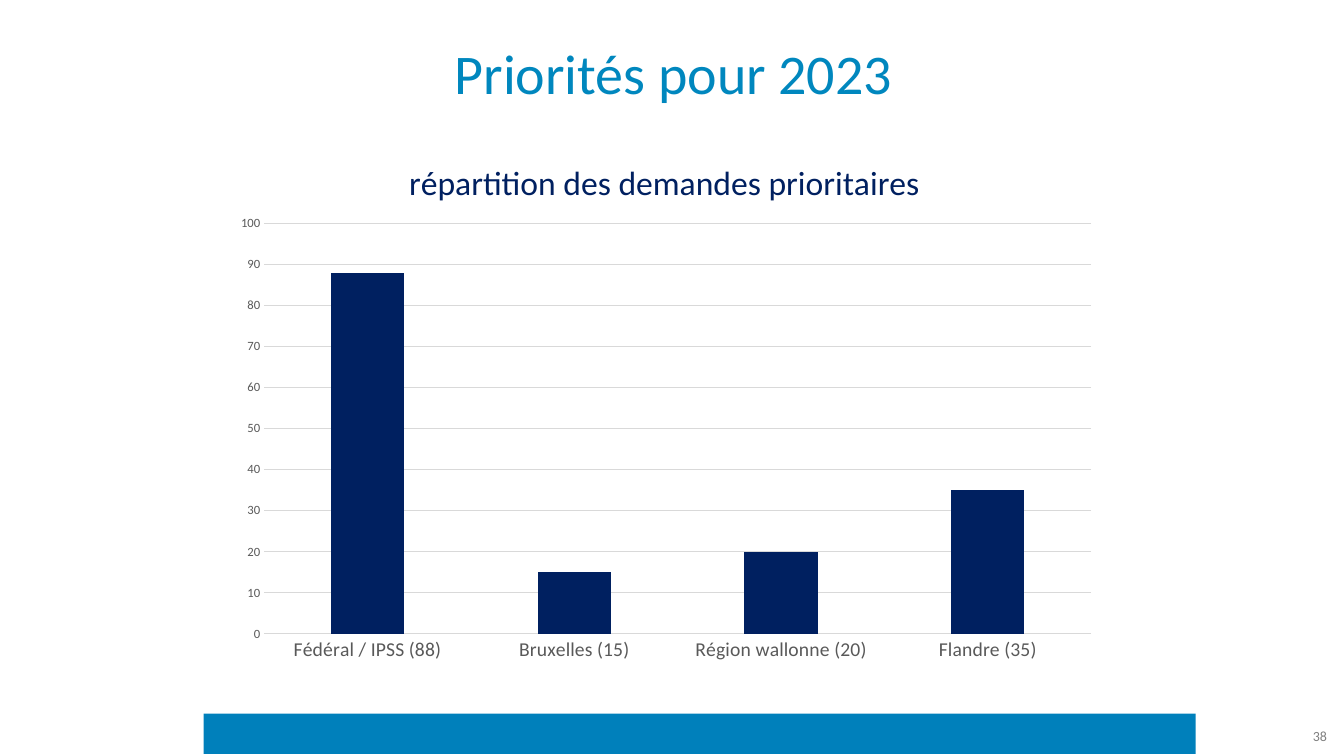
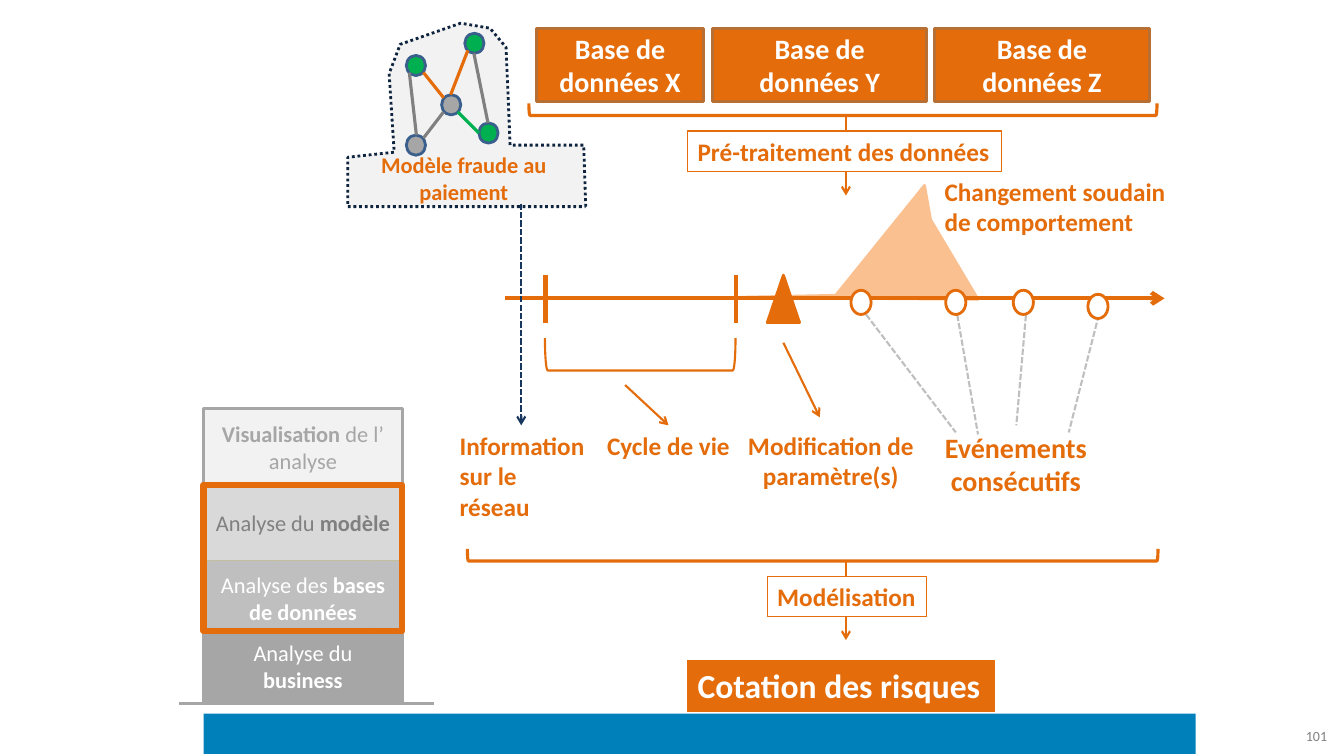
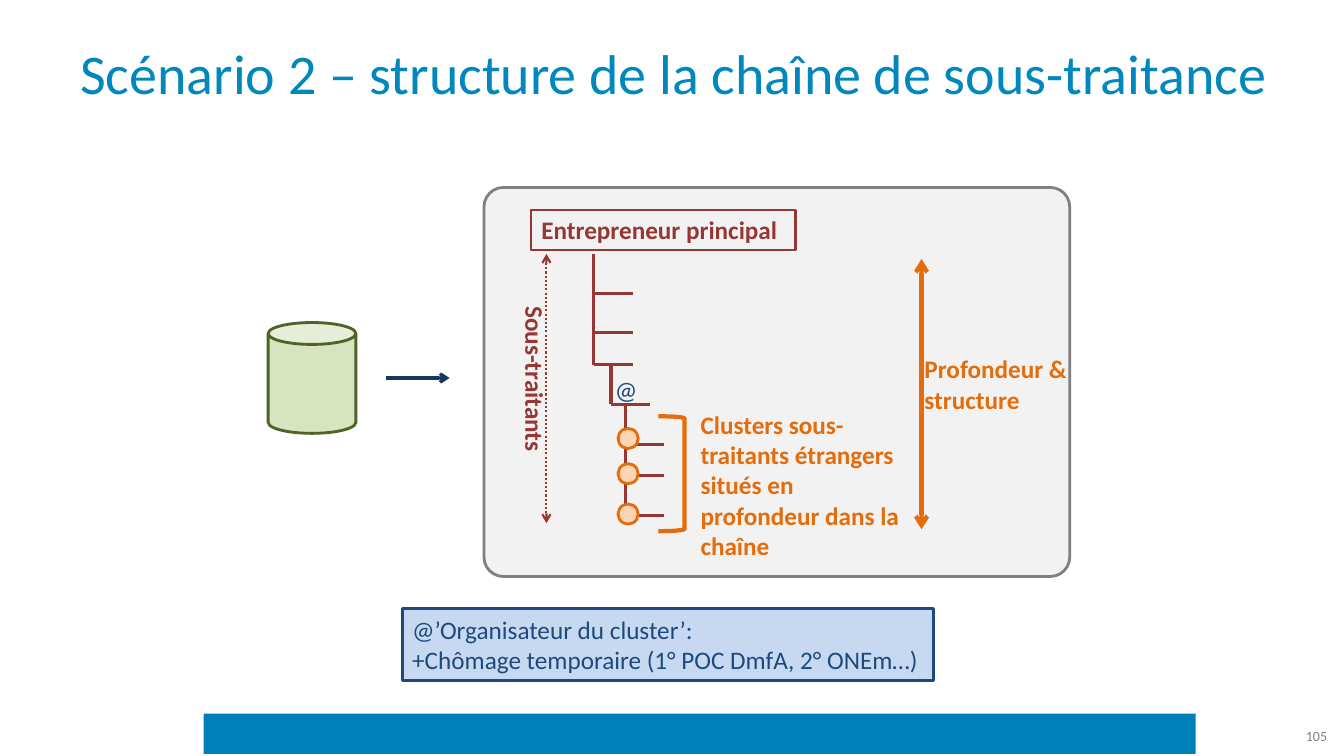
from dataclasses import dataclass
from typing import NamedTuple, Optional

from lxml.etree import SubElement
from pptx import Presentation
from pptx.chart.data import CategoryChartData
from pptx.dml.color import RGBColor
from pptx.enum.chart import XL_CHART_TYPE, XL_TICK_MARK
from pptx.enum.dml import MSO_LINE
from pptx.enum.shapes import MSO_CONNECTOR, MSO_SHAPE
from pptx.enum.text import MSO_ANCHOR, MSO_AUTO_SIZE, PP_ALIGN
from pptx.oxml import parse_xml
from pptx.oxml.ns import nsdecls, qn
from pptx.util import Inches, Pt

FONT = "Calibri"
WHITE = RGBColor(0xFF, 0xFF, 0xFF)
BAND_BLUE = RGBColor(0x00, 0x80, 0xBB)
TITLE_BLUE = RGBColor(0x00, 0x87, 0xBE)
BAR_NAVY = RGBColor(0x00, 0x20, 0x60)
OUTLINE_NAVY = RGBColor(0x0F, 0x24, 0x3E)
ARROW_NAVY = RGBColor(0x17, 0x37, 0x5E)
NOTE_BLUE = RGBColor(0x1F, 0x49, 0x7D)
NOTE_FILL = RGBColor(0xC6, 0xD9, 0xF1)
NODE_BLUE = RGBColor(0x3A, 0x5F, 0x8C)
ORANGE = RGBColor(0xE4, 0x6C, 0x0A)
BROWN = RGBColor(0xB7, 0x6F, 0x34)
PEACH = RGBColor(0xFA, 0xC0, 0x90)
PALE_PEACH = RGBColor(0xFC, 0xD5, 0xB5)
GREEN = RGBColor(0x00, 0xB0, 0x50)
CAN_FILL = RGBColor(0xD7, 0xE4, 0xBD)
CAN_LINE = RGBColor(0x4F, 0x62, 0x28)
RED = RGBColor(0x95, 0x37, 0x35)
TAN = RGBColor(0xC4, 0xBD, 0x97)
GRAY_95 = RGBColor(0xF2, 0xF2, 0xF2)
GRAY_85 = RGBColor(0xD9, 0xD9, 0xD9)
GRAY_75 = RGBColor(0xBF, 0xBF, 0xBF)
GRAY_65 = RGBColor(0xA6, 0xA6, 0xA6)
GRAY_50 = RGBColor(0x80, 0x80, 0x80)
GRAY_35 = RGBColor(0x59, 0x59, 0x59)

DASH, DOT = MSO_LINE.SQUARE_DOT, MSO_LINE.ROUND_DOT
CENTER, RIGHT = PP_ALIGN.CENTER, PP_ALIGN.RIGHT
RECT, OVAL, BRACKET = MSO_SHAPE.RECTANGLE, MSO_SHAPE.OVAL, MSO_SHAPE.RIGHT_BRACKET


class Rect(NamedTuple):
    left: float
    top: float
    width: float
    height: float


class Point(NamedTuple):
    x: float
    y: float


@dataclass(frozen=True)
class Stroke:
    color: RGBColor
    width: float
    dash: Optional[MSO_LINE] = None
    head: bool = False
    tail: bool = False


class Layer(NamedTuple):
    text: str
    top: float
    fill: RGBColor
    color: RGBColor
    edge: RGBColor = TAN


class Branch(NamedTuple):
    x: float
    top: float
    bottom: float


def set_line(line, stroke: Optional[Stroke]) -> None:
    if stroke is None:
        line.fill.background()
        return
    line.color.rgb = stroke.color
    line.width = Pt(stroke.width)
    if stroke.dash:
        line.dash_style = stroke.dash


def paint(sp, fill: Optional[RGBColor], stroke: Optional[Stroke]) -> None:
    sp.shadow.inherit = False
    if fill is None:
        sp.fill.background()
    else:
        sp.fill.solid()
        sp.fill.fore_color.rgb = fill
    set_line(sp.line, stroke)


def write(sp, text: str, *, size: float = 18, color: RGBColor = ORANGE,
          bold: bool = False, align: PP_ALIGN = PP_ALIGN.LEFT,
          middle: bool = False, wrap: bool = True, grow: bool = False) -> None:
    """Fill a shape with text; parts between ** marks are bold."""
    tf = sp.text_frame
    tf.word_wrap = wrap
    tf.auto_size = MSO_AUTO_SIZE.SHAPE_TO_FIT_TEXT if grow else MSO_AUTO_SIZE.NONE
    tf.vertical_anchor = MSO_ANCHOR.MIDDLE if middle else MSO_ANCHOR.TOP
    for i, row in enumerate(text.split("\n")):
        p = tf.add_paragraph() if i else tf.paragraphs[0]
        p.alignment = align
        for j, part in enumerate(row.split("**")):
            if not part:
                continue
            r = p.add_run()
            r.text = part
            r.font.name = FONT
            r.font.size = Pt(size)
            r.font.bold = bold or j % 2 == 1
            r.font.color.rgb = color


def add_shape(s, kind: MSO_SHAPE, at: Rect, fill: Optional[RGBColor] = None,
              stroke: Optional[Stroke] = None, rotation: float = 0):
    sp = s.shapes.add_shape(kind, *map(Inches, at))
    sp.rotation = rotation
    paint(sp, fill, stroke)
    return sp


def add_text(s, text: str, at: Rect, rotation: float = 0, **fmt) -> None:
    sp = s.shapes.add_textbox(*map(Inches, at))
    sp.rotation = rotation
    write(sp, text, **fmt)


def add_label(s, text: str, at: Rect, **fmt) -> None:
    add_text(s, text, at, bold=True, grow=True, **fmt)


def add_tag(s, text: str, at: Rect, stroke: Stroke,
            fill: Optional[RGBColor] = None, **fmt) -> None:
    """Framed one-line label that sizes itself to its text."""
    write(add_shape(s, RECT, at, fill, stroke), text, wrap=False, grow=True, **fmt)


def add_line(s, start: Point, end: Point, stroke: Stroke) -> None:
    c = s.shapes.add_connector(MSO_CONNECTOR.STRAIGHT, *map(Inches, (*start, *end)))
    set_line(c.line, stroke)
    sp_pr = c.element.spPr
    ln = sp_pr.find(qn("a:ln"))
    for end_tag, wanted in (("a:headEnd", stroke.head), ("a:tailEnd", stroke.tail)):
        if wanted:
            SubElement(ln, qn(end_tag)).set("type", "arrow")
    SubElement(sp_pr, qn("a:effectLst"))


def add_outline(s, points: list[Point], fill: RGBColor, stroke: Stroke) -> None:
    corners = [(Inches(x), Inches(y)) for x, y in points]
    builder = s.shapes.build_freeform(*corners[0])
    builder.add_line_segments(corners[1:], close=True)
    paint(builder.convert_to_shape(), fill, stroke)


def new_slide(prs, number: int, title: str = ""):
    """Blank slide with the blue band, its page number and an optional title."""
    s = prs.slides.add_slide(prs.slide_layouts[6])
    add_shape(s, RECT, Rect(2.02, 7.08, 9.84, 0.4), BAND_BLUE)
    add_text(s, str(number), Rect(12.17, 7.1, 1.09, 0.4), size=10,
             color=GRAY_50, align=RIGHT, middle=True)
    if title:
        add_text(s, title, Rect(0.68, 0.21, 12, 1.01), size=40,
                 color=TITLE_BLUE, align=CENTER, middle=True)
    return s


def set_font(font, size: float, color: RGBColor) -> None:
    font.name, font.size, font.bold = FONT, Pt(size), False
    font.color.rgb = color


def priorities_slide(prs) -> None:
    s = new_slide(prs, 38, "Priorités pour 2023")
    requests = {"Fédéral / IPSS": 88, "Bruxelles": 15, "Région wallonne": 20, "Flandre": 35}
    data = CategoryChartData()
    data.categories = [f"{name} ({count})" for name, count in requests.items()]
    data.add_series("Series 1", list(requests.values()))
    chart = s.shapes.add_chart(XL_CHART_TYPE.COLUMN_CLUSTERED,
                               *map(Inches, Rect(2.18, 1.37, 8.82, 5.29)), data).chart
    set_font(chart.font, 10, RGBColor(0, 0, 0))
    chart.has_legend = False
    chart.has_title = True
    tf = chart.chart_title.text_frame
    tf.text = "répartition des demandes prioritaires"
    set_font(tf.paragraphs[0].runs[0].font, 24, BAR_NAVY)
    chart.chart_title.include_in_layout = False

    plot = chart.plots[0]
    plot.gap_width = 182
    plot.vary_by_categories = False
    fill = plot.series[0].format.fill
    fill.solid()
    fill.fore_color.rgb = BAR_NAVY

    grid = Stroke(GRAY_85, 0.75)
    cat, val = chart.category_axis, chart.value_axis
    for axis, size, stroke in ((cat, 14, grid), (val, 9, None)):
        axis.major_tick_mark = axis.minor_tick_mark = XL_TICK_MARK.NONE
        set_font(axis.tick_labels.font, size, GRAY_35)
        set_line(axis.format.line, stroke)
    val.minimum_scale, val.maximum_scale, val.major_unit = 0, 100, 10
    set_line(val.major_gridlines.format.line, grid)

    area = chart.element.find(".//" + qn("c:plotArea"))
    for layout in area.findall(qn("c:layout")):
        area.remove(layout)
    area.insert(0, parse_xml(
        f'<c:layout {nsdecls("c")}><c:manualLayout><c:layoutTarget val="inner"/>'
        '<c:xMode val="edge"/><c:yMode val="edge"/><c:x val="0.05"/><c:y val="0.16"/>'
        '<c:w val="0.93"/><c:h val="0.77"/></c:manualLayout></c:layout>'))


def add_network(s) -> None:
    """Fraud model: a small graph in a dotted outline."""
    for fill, nodes in ((GREEN, ((4.03, 0.55), (4.61, 0.33), (4.75, 1.22))),
                        (GRAY_65, ((4.03, 1.34), (4.38, 0.94)))):
        for x, y in nodes:
            add_shape(s, OVAL, Rect(x, y, 0.19, 0.2), fill, Stroke(NODE_BLUE, 2))
    edges = (
        (Point(4.7, 0.53), Point(4.84, 1.22), GRAY_50),
        (Point(4.64, 0.5), Point(4.47, 0.94), ORANGE),
        (Point(4.54, 1.11), Point(4.75, 1.32), GREEN),
        (Point(4.4, 1.11), Point(4.2, 1.37), GRAY_50),
        (Point(4.4, 0.97), Point(4.2, 0.72), ORANGE),
        (Point(4.06, 0.72), Point(4.13, 1.34), GRAY_50),
    )
    for start, end, color in edges:
        add_line(s, start, end, Stroke(color, 2.25))
    add_label(s, "Modèle fraude au paiement", Rect(3.38, 1.45, 2.44, 0.64),
              size=16, align=CENTER)


def add_layers(s) -> None:
    """Stack of analysis layers at the lower left."""
    left, width = 2.02, 1.97
    add_line(s, Point(1.78, 6.98), Point(4.3, 6.98), Stroke(GRAY_65, 2.25))
    layers = (
        Layer("**Visualisation **de l’ analyse", 4.06, GRAY_95, GRAY_65),
        Layer("Analyse du **modèle**", 4.81, GRAY_85, GRAY_50),
        Layer("Analyse des **bases de données**", 5.56, GRAY_75, WHITE),
        Layer("Analyse du **business**", 6.23, GRAY_65, WHITE, GRAY_75),
    )
    for layer in layers:
        sp = add_shape(s, RECT, Rect(left, layer.top, width, 0.75), layer.fill,
                       Stroke(layer.edge, 0.75, DASH))
        write(sp, layer.text, size=16, color=layer.color, align=CENTER, middle=True)
    add_shape(s, RECT, Rect(left, 4.05, width, 2.93), None, Stroke(GRAY_65, 2))
    add_shape(s, RECT, Rect(left, 4.81, width, 1.45), None, Stroke(ORANGE, 4.5))


def risk_slide(prs) -> None:
    s = new_slide(prs, 101)
    arrow, thick = Stroke(ORANGE, 1.5, tail=True), Stroke(ORANGE, 3)
    edge, frame = Stroke(ORANGE, 2), Stroke(ORANGE, 0.75)
    for start, end in ((Point(8.59, 3.12), Point(9.48, 4.29)),
                       (Point(9.48, 3.04), Point(9.7, 4.31)),
                       (Point(10.19, 2.96), Point(10.08, 4.22)),
                       (Point(10.92, 3.04), Point(10.6, 4.29))):
        add_line(s, start, end, Stroke(GRAY_75, 1.5, DASH))

    cloud = [Point(5.81, 2.05), Point(5.79, 1.44), Point(5.06, 1.44), Point(5.02, 0.47),
             Point(4.86, 0.28), Point(4.57, 0.23), Point(3.97, 0.44), Point(3.86, 0.73),
             Point(3.91, 1.51), Point(3.45, 1.56), Point(3.45, 2.05)]
    add_outline(s, cloud, GRAY_95, Stroke(OUTLINE_NAVY, 2, DOT))
    peak = [Point(7.33, 2.95), Point(8.29, 2.93), Point(9.17, 1.84),
            Point(9.23, 2.18), Point(9.7, 2.97)]
    add_outline(s, peak, PEACH, Stroke(PEACH, 2))

    for name, left, width in (("X", 5.32, 1.66), ("Y", 7.07, 2.12), ("Z", 9.27, 2.13)):
        sp = add_shape(s, RECT, Rect(left, 0.28, width, 0.73), ORANGE, Stroke(BROWN, 2))
        write(sp, f"Base de données {name}", size=20, color=WHITE, bold=True,
              align=CENTER, middle=True)

    add_line(s, Point(5.01, 2.96), Point(11.55, 2.96), Stroke(ORANGE, 3, tail=True))
    for x in (5.41, 7.3):
        add_line(s, Point(x, 2.73), Point(x, 3.2), thick)
    for x, y in ((8.44, 2.88), (9.38, 2.88), (10.05, 2.88), (10.79, 2.92)):
        add_shape(s, OVAL, Rect(x, y, 0.2, 0.24), WHITE, edge)
    add_shape(s, MSO_SHAPE.ISOSCELES_TRIANGLE, Rect(7.61, 2.73, 0.32, 0.47), ORANGE, edge)

    for at, width in ((Rect(6.19, 2.57, 0.32, 1.89), 1.5),
                      (Rect(8.3, -2.03, 0.12, 6.23), 2.25),
                      (Rect(8, 2.08, 0.12, 6.85), 2.25)):
        add_shape(s, BRACKET, at, None, Stroke(ORANGE, width), rotation=90)
    for start, end in ((Point(7.77, 3.4), Point(8.13, 4.14)),
                       (Point(6.2, 3.82), Point(6.63, 4.22)),
                       (Point(8.39, 1.15), Point(8.39, 1.94)),
                       (Point(8.39, 5.56), Point(8.39, 6.35))):
        add_line(s, start, end, arrow)

    add_label(s, "Evénements consécutifs", Rect(8.87, 4.22, 2.41, 0.77),
              size=20, align=CENTER)
    add_label(s, "Cycle de vie", Rect(5.8, 4.22, 1.66, 0.4), align=CENTER)
    add_label(s, "Modification de paramètre(s)", Rect(7.29, 4.22, 1.9, 0.71), align=CENTER)
    add_label(s, "Changement soudain de comportement", Rect(9.27, 1.7, 2.43, 0.71))
    add_tag(s, "Pré-traitement des données", Rect(6.82, 1.3, 3.11, 0.4), frame, WHITE, bold=True)
    add_tag(s, "Modélisation", Rect(7.61, 5.72, 1.58, 0.4), frame, WHITE, bold=True)
    add_tag(s, "Cotation des risques", Rect(6.82, 6.55, 3.04, 0.51), frame, ORANGE,
            size=24, color=WHITE, bold=True)

    add_network(s)
    add_line(s, Point(5.17, 2.02), Point(5.17, 4.22),
             Stroke(ARROW_NAVY, 1.5, DASH, tail=True))
    add_label(s, "Information sur le réseau", Rect(4.46, 4.22, 1.51, 1.01))
    add_layers(s)


def chain_slide(prs) -> None:
    s = new_slide(prs, 105, "Scénario 2 – structure de la chaîne de sous-traitance")
    panel = add_shape(s, MSO_SHAPE.ROUNDED_RECTANGLE, Rect(4.8, 1.86, 5.81, 3.86),
                      GRAY_95, Stroke(GRAY_50, 2))
    panel.adjustments[0] = 0.05

    branches = (Branch(5.89, 2.52, 2.91), Branch(5.89, 2.91, 3.3), Branch(5.89, 3.22, 3.62),
                Branch(6.06, 3.62, 4.01), Branch(6.2, 4.01, 4.41), Branch(6.2, 4.33, 4.72),
                Branch(6.2, 4.72, 5.11))
    for x, top, bottom in branches:
        corner = Point(x, bottom)
        for end in (Point(x, top), Point(x + 0.39, bottom)):
            add_line(s, corner, end, Stroke(RED, 2.25))

    add_shape(s, BRACKET, Rect(6.53, 4.13, 0.26, 1.14), None, Stroke(ORANGE, 3))
    for y in (4.25, 4.6, 5):
        add_shape(s, OVAL, Rect(6.13, y, 0.2, 0.2), PALE_PEACH, Stroke(ORANGE, 2))
    add_label(s, "Clusters sous-traitants étrangers situés en profondeur dans la chaîne",
              Rect(6.85, 4.01, 2.34, 1.62))
    add_shape(s, MSO_SHAPE.CAN, Rect(2.66, 3.2, 0.87, 1.1), CAN_FILL, Stroke(CAN_LINE, 2))

    add_tag(s, "Entrepreneur principal", Rect(5.27, 2.08, 2.62, 0.4), Stroke(RED, 1.5),
            color=RED, bold=True)
    add_line(s, Point(5.42, 2.52), Point(5.42, 5.19),
             Stroke(RED, 1.5, DOT, head=True, tail=True))
    add_label(s, "Sous-traitants", Rect(4.48, 3.57, 1.66, 0.4), rotation=90,
              color=RED, wrap=False)
    add_line(s, Point(3.83, 3.75), Point(4.46, 3.75), Stroke(ARROW_NAVY, 2.25, tail=True))
    add_line(s, Point(9.14, 2.57), Point(9.14, 5.25),
             Stroke(ORANGE, 3, head=True, tail=True))
    add_label(s, "Profondeur &\nstructure", Rect(9.07, 3.46, 1.68, 0.71), wrap=False)
    add_tag(s, "@’Organisateur du cluster’:\n+Chômage temporaire (1° POC DmfA, 2° ONEm…)",
            Rect(3.99, 6.04, 5.27, 0.71), Stroke(NOTE_BLUE, 2), NOTE_FILL, color=NOTE_BLUE)
    add_text(s, "@", Rect(6, 3.66, 0.43, 0.4), color=NOTE_BLUE, wrap=False, grow=True)


def main() -> None:
    prs = Presentation()
    prs.slide_width, prs.slide_height = Inches(13.33), Inches(7.5)
    priorities_slide(prs)
    risk_slide(prs)
    chain_slide(prs)
    prs.save("out.pptx")


if __name__ == "__main__":
    main()
